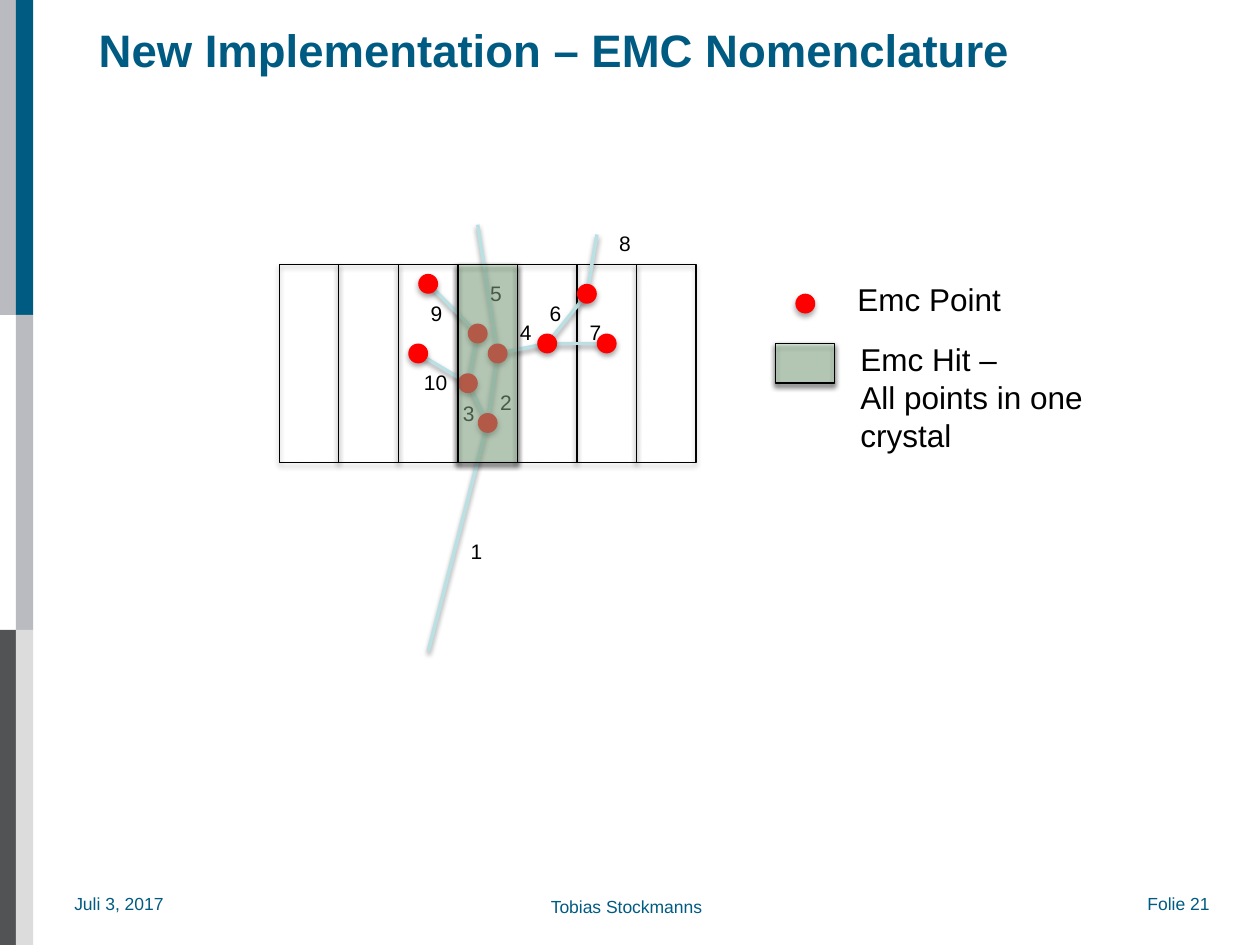
from dataclasses import dataclass

from lxml.etree import SubElement
from pptx import Presentation
from pptx.dml.color import RGBColor
from pptx.enum.shapes import MSO_CONNECTOR as Line, MSO_SHAPE as Shape
from pptx.enum.text import MSO_ANCHOR as Anchor
from pptx.oxml.ns import qn
from pptx.util import Pt


@dataclass(frozen=True)
class Theme:
    font: str = "Arial"
    brand: str = "005B82"
    ink: str = "000000"
    silver: str = "B9BBC0"
    slate: str = "515355"
    mist: str = "DCDCDC"
    track: str = "BBE0E3"
    point: str = "FF0000"
    hit: str = "CCFFCC"
    title_size: float = 26
    legend_size: float = 18
    label_size: float = 12
    footer_size: float = 10


class Painter:
    def __init__(self, page, theme):
        self.page = page
        self.theme = theme

    def cast_shadow(self, item, strength, distance):
        effects = SubElement(item._element.spPr, qn("a:effectLst"))
        shadow = SubElement(effects, qn("a:outerShdw"), blurRad=str(Pt(3.1)),
                            dist=str(Pt(distance)), dir="5400000", rotWithShape="0")
        color = SubElement(shadow, qn("a:srgbClr"), val=self.theme.ink)
        SubElement(color, qn("a:alpha"), val=str(strength * 1000))

    def shape(self, kind, left, top, width, height, fill=None, outlined=False,
              shadowed=False, opacity=100):
        item = self.page.shapes.add_shape(kind, Pt(left), Pt(top), Pt(width), Pt(height))
        if fill:
            item.fill.solid()
            item.fill.fore_color.rgb = RGBColor.from_string(fill)
            if opacity < 100:
                color = item._element.spPr.find(qn("a:solidFill"))[0]
                SubElement(color, qn("a:alpha"), val=str(opacity * 1000))
        else:
            item.fill.background()
        if outlined:
            item.line.color.rgb = RGBColor.from_string(self.theme.ink)
            item.line.width = Pt(0.75)
        else:
            item.line.fill.background()
        if shadowed:
            self.cast_shadow(item, 35, 1.8)
        else:
            item.shadow.inherit = False

    def cell(self, left, top, width, height, **style):
        self.shape(Shape.RECTANGLE, left, top, width, height,
                   outlined=True, shadowed=True, **style)

    def hit(self, left, top, width, height):
        self.cell(left, top, width, height, fill=self.theme.hit, opacity=35)

    def point(self, center):
        x, y = center
        size = 11.34
        self.shape(Shape.OVAL, x - size / 2, y - size / 2, size, size,
                   fill=self.theme.point, shadowed=True)

    def track(self, start, end):
        line = self.page.shapes.add_connector(
            Line.STRAIGHT, *(Pt(value) for value in (*start, *end)))
        line.line.color.rgb = RGBColor.from_string(self.theme.track)
        line.line.width = Pt(2)
        self.cast_shadow(line, 38, 1.6)

    def text(self, left, top, width, height, lines, size, color=None, bold=False,
             inset=(7.2, 3.6), anchor=Anchor.TOP):
        box = self.page.shapes.add_textbox(Pt(left), Pt(top), Pt(width), Pt(height))
        frame = box.text_frame
        frame.word_wrap = False
        frame.vertical_anchor = anchor
        frame.margin_left = frame.margin_right = Pt(inset[0])
        frame.margin_top = frame.margin_bottom = Pt(inset[1])
        frame.text = lines
        for para in frame.paragraphs:
            para.font.name = self.theme.font
            para.font.size = Pt(size)
            para.font.bold = bold
            para.font.color.rgb = RGBColor.from_string(color or self.theme.ink)

    def label(self, left, top, number):
        """Write a track number in a box that widens with its digits."""
        width = 14.6 + 7 * len(number)
        self.text(left, top, width, 21.6, number, self.theme.label_size)

    def heading(self, left, top, width, height, words, size, bold=False):
        self.text(left, top, width, height, words, size, self.theme.brand, bold,
                  inset=(0, 0), anchor=Anchor.MIDDLE if bold else Anchor.TOP)


CELL_LEFT, CELL_TOP, CELL_WIDTH, CELL_HEIGHT = 159.6, 151, 34.02, 113.4
CELL_COUNT, HIT_CELL = 7, 3

POINTS = {
    "first": (278.7, 241.7),
    "left fork": (267.4, 219),
    "upper left": (273, 190.6),
    "right fork": (284.4, 202),
    "right split": (312.7, 196.3),
    "upper right": (335.4, 167.9),
    "far left": (239, 202),
    "top left": (244.7, 162.2),
    "far right": (346.7, 196.3),
}
ENDS = {"source": (244.7, 372.3), "top exit": (273, 128.4), "right exit": (341.1, 134)}
TRACKS = [
    ("source", "first"), ("first", "left fork"), ("first", "right fork"),
    ("right fork", "right split"), ("right fork", "top exit"),
    ("right split", "far right"), ("right split", "upper right"),
    ("upper right", "right exit"), ("left fork", "far left"),
    ("left fork", "upper left"), ("upper left", "top left"),
]
TRACK_LABELS = [
    (261.8, 304), (278.7, 219), (257.5, 225.4), (290, 179), (273, 157),
    (307, 168), (329.8, 179), (346.7, 128), (239, 168),
]


def draw_frame(painter):
    theme = painter.theme
    columns = [(0, (theme.silver, None, theme.slate)),
               (9, (theme.brand, theme.silver, theme.mist))]
    for left, colors in columns:
        for row, color in enumerate(colors):
            if color:
                painter.shape(Shape.RECTANGLE, left, 180 * row, 10, 180, fill=color)
    for left, top, width, words in [(42.5, 510, 61, "Juli 3, 2017"),
                                    (655.7, 510, 45, "Folie 21"),
                                    (314.8, 512, 91, "Tobias Stockmanns")]:
        painter.heading(left, top, width, 12, words, theme.footer_size)
    painter.heading(56.4, 5.5, 523, 45, "New Implementation – EMC Nomenclature",
                    theme.title_size, bold=True)


def draw_shower(painter):
    for column in range(CELL_COUNT):
        painter.cell(CELL_LEFT + column * CELL_WIDTH, CELL_TOP, CELL_WIDTH, CELL_HEIGHT)
    nodes = POINTS | ENDS
    for start, end in TRACKS:
        painter.track(nodes[start], nodes[end])
    for number, (left, top) in enumerate(TRACK_LABELS, 1):
        painter.label(left, top, str(number))
    for center in POINTS.values():
        painter.point(center)
    painter.hit(CELL_LEFT + HIT_CELL * CELL_WIDTH, CELL_TOP, CELL_WIDTH, CELL_HEIGHT)
    painter.label(235.2, 207.5, "10")


def draw_legend(painter):
    size = painter.theme.legend_size
    painter.point((460.2, 173.5))
    painter.text(482.9, 156.6, 97.2, 29, "Emc Point", size)
    painter.hit(443, 196.3, CELL_WIDTH, 22.6)
    painter.text(484.6, 190.8, 144, 73, "Emc Hit –\nAll points in one\ncrystal", size)


def main():
    deck = Presentation()
    deck.slide_width, deck.slide_height = Pt(720), Pt(540)
    painter = Painter(deck.slides.add_slide(deck.slide_layouts[6]), Theme())
    draw_frame(painter)
    draw_shower(painter)
    draw_legend(painter)
    deck.save("out.pptx")


if __name__ == "__main__":
    main()
